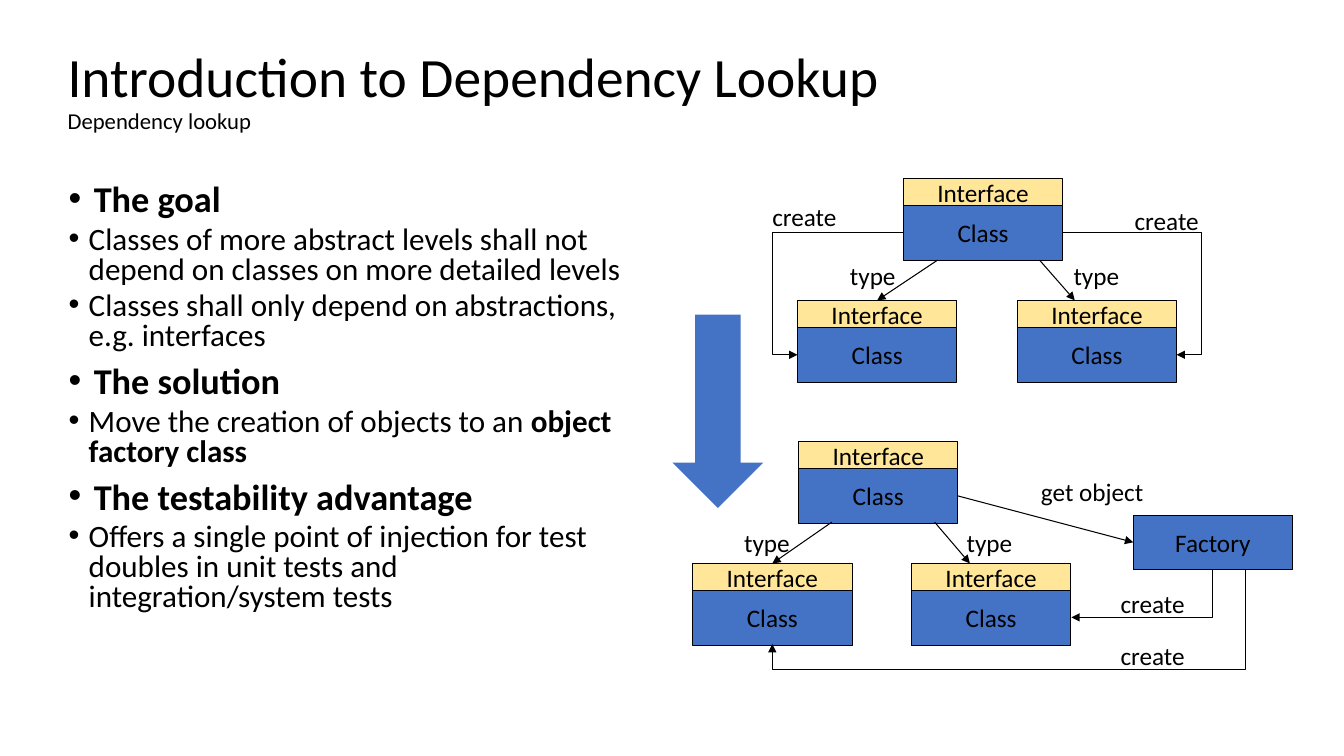
"""Build a slide that introduces dependency lookup with two class diagrams."""
from lxml.etree import SubElement
from pptx import Presentation
from pptx.dml.color import RGBColor
from pptx.enum.shapes import MSO_CONNECTOR as Link, MSO_SHAPE as Shape
from pptx.enum.text import MSO_ANCHOR as Anchor, MSO_AUTO_SIZE as AutoSize, PP_ALIGN as Align
from pptx.oxml.ns import qn
from pptx.util import Inches, Pt

BLACK = RGBColor(0x00, 0x00, 0x00)
BLUE = RGBColor(0x44, 0x72, 0xC4)
YELLOW = RGBColor(0xFF, 0xE6, 0x99)
FONT = "Calibri"
BOX_WIDTH, CLASS_HEIGHT, INTERFACE_HEIGHT = 1.58, 0.54, 0.27
TOP, LEFT, RIGHT = 0, 1, 3

TOPICS = [
    ("The goal", [
        ("Classes of more abstract levels shall not depend on classes on more detailed levels", ""),
        ("Classes shall only depend on abstractions, e.g. interfaces", ""),
    ]),
    ("The solution", [("Move the creation of objects to an ", "object factory class")]),
    ("The testability advantage", [
        ("Offers a single point of injection for test doubles in unit tests "
         "and integration/system tests", ""),
    ]),
]
LABELS = [
    ("create", 10.88, 2.04, 1.01, Align.RIGHT),
    ("create", 7.66, 2.0, 1.01, Align.LEFT),
    ("type", 8.43, 2.58, 1.01, Align.LEFT),
    ("type", 10.09, 2.58, 1.01, Align.RIGHT),
    ("create", 10.74, 5.84, 1.01, Align.RIGHT),
    ("create", 10.74, 6.35, 1.01, Align.RIGHT),
    ("type", 7.38, 5.23, 1.01, Align.LEFT),
    ("type", 9.03, 5.23, 1.01, Align.RIGHT),
    ("get object", 9.84, 4.73, 1.5, Align.RIGHT),
]


def set_font(font, size, bold=False):
    """Apply the slide's typeface and colour at a size."""
    font.name, font.size, font.bold = FONT, Pt(size), bold
    font.color.rgb = BLACK


def place(shape, left, top, width, height):
    """Move and size a shape, in inches."""
    shape.left, shape.top = Inches(left), Inches(top)
    shape.width, shape.height = Inches(width), Inches(height)


def fill_title(title, heading, subheading):
    """Write the title and its small second line."""
    place(title, 0.57, 0.56, 12.23, 0.71)
    frame = title.text_frame
    frame.auto_size, frame.vertical_anchor = AutoSize.NONE, Anchor.MIDDLE
    para = frame.paragraphs[0]
    para.alignment, para.line_spacing = Align.LEFT, 0.9
    set_font(para.font, 39.6)
    para.add_run().text = heading
    para.add_line_break()
    span = para.add_run()
    span.text = subheading
    span.font.size = Pt(16.2)


def add_bullet(para, level, indent, size, space, bold):
    """Format a paragraph as a bulleted item."""
    para.level = level
    para.line_spacing, para.space_before = 0.8, Pt(space)
    para.space_after = Pt(0)
    properties = para._p.get_or_add_pPr()
    properties.set("marL", str(Inches(indent)))
    properties.set("indent", str(-Inches(indent)))
    SubElement(properties, qn("a:buFont"), typeface="Arial")
    SubElement(properties, qn("a:buChar"), char="•")
    set_font(para.font, size, bold)


def fill_body(body):
    """Write the topics and their points as a two-level list."""
    place(body, 0.58, 1.78, 5.83, 4.62)
    frame = body.text_frame
    frame.auto_size = AutoSize.NONE
    for number, (heading, points) in enumerate(TOPICS):
        para = frame.add_paragraph() if number else frame.paragraphs[0]
        add_bullet(para, 0, 0.25, 25.9, 10 if number else 0, True)
        para.add_run().text = heading
        for plain, strong in points:
            para = frame.add_paragraph()
            add_bullet(para, 1, 0.2, 22.2, 5, False)
            para.add_run().text = plain
            if strong:
                span = para.add_run()
                span.text = strong
                span.font.bold = True


def add_box(page, text, left, top, height, colour):
    """Add an outlined rectangle with centred text."""
    box = page.shapes.add_shape(
        Shape.RECTANGLE, Inches(left), Inches(top), Inches(BOX_WIDTH), Inches(height))
    box.shadow.inherit = False
    box.fill.solid()
    box.fill.fore_color.rgb = colour
    box.line.color.rgb, box.line.width = BLACK, Pt(0.5)
    frame = box.text_frame
    frame.vertical_anchor = Anchor.MIDDLE
    frame.margin_top = frame.margin_bottom = Inches(0.08)
    para = frame.paragraphs[0]
    para.text, para.alignment = text, Align.CENTER
    set_font(para.font, 18)
    return box


def add_class(page, left, top):
    """Add a class below its interface and return both boxes."""
    body = add_box(page, "Class", left, top + INTERFACE_HEIGHT, CLASS_HEIGHT, BLUE)
    interface = add_box(page, "Interface", left, top, INTERFACE_HEIGHT, YELLOW)
    return interface, body


def add_label(page, text, left, top, width, align):
    """Add an arrow label without insets."""
    label = page.shapes.add_textbox(Inches(left), Inches(top), Inches(width), Inches(0.3))
    frame = label.text_frame
    frame.word_wrap, frame.auto_size = True, AutoSize.SHAPE_TO_FIT_TEXT
    frame.margin_left = frame.margin_right = frame.margin_top = frame.margin_bottom = 0
    para = frame.paragraphs[0]
    para.text, para.alignment = text, align
    set_font(para.font, 18)


def add_arrow(page, begin, end, kind=Link.STRAIGHT):
    """Add a thin black connector with an arrowhead at its end."""
    arrow = page.shapes.add_connector(kind, *map(Inches, begin + end))
    arrow.line.color.rgb, arrow.line.width = BLACK, Pt(0.75)
    SubElement(arrow.line._get_or_add_ln(), qn("a:tailEnd"), type="triangle")
    SubElement(arrow._element.spPr, qn("a:effectLst"))
    return arrow


def add_elbow(page, preset, frame, rotation=0, flip=False, adjustments=()):
    """Add a bent arrow within a left, top, width, height frame."""
    left, top, width, height = frame
    arrow = add_arrow(page, (left, top), (left + width, top + height), Link.ELBOW)
    properties = arrow._element.spPr
    transform = properties.find(qn("a:xfrm"))
    if rotation:
        transform.set("rot", str(rotation * 60000))
    if flip:
        transform.set("flipV", "1")
    geometry = properties.find(qn("a:prstGeom"))
    geometry.set("prst", preset)
    for number, ratio in enumerate(adjustments, 1):
        SubElement(geometry.find(qn("a:avLst")), qn("a:gd"),
                   name=f"adj{number}", fmla=f"val {round(ratio * 100000)}")


def draw_direct_creation(page):
    """Draw the classes that create their own dependencies."""
    left_interface, _ = add_class(page, 7.91, 2.98)
    add_class(page, 10.09, 2.98)
    add_class(page, 8.96, 1.77)
    add_arrow(page, (9.3, 2.58), (8.7, 2.98)).end_connect(left_interface, TOP)
    add_arrow(page, (10.31, 2.58), (10.66, 2.98))
    add_elbow(page, "bentConnector3", (7.91, 2.31, 1.05, 1.21), 180, True, [0.25 / 1.05 + 1])
    add_elbow(page, "bentConnector3", (10.54, 2.31, 1.13, 1.21), adjustments=[0.25 / 1.13 + 1])


def draw_factory_creation(page):
    """Draw the classes whose dependencies come from a factory."""
    left_interface, _ = add_class(page, 6.87, 5.59)
    add_class(page, 9.04, 5.59)
    _, client = add_class(page, 7.92, 4.38)
    factory = add_box(page, "Factory", 11.24, 5.11, CLASS_HEIGHT, BLUE)
    add_arrow(page, (8.25, 5.18), (7.66, 5.59)).end_connect(left_interface, TOP)
    add_arrow(page, (9.27, 5.18), (9.62, 5.59))
    lookup = add_arrow(page, (9.5, 4.92), (11.24, 5.38))
    lookup.begin_connect(client, RIGHT)
    lookup.end_connect(factory, LEFT)
    add_elbow(page, "bentConnector2", (11.09, 5.19, 0.47, 1.4), 90)
    add_elbow(page, "bentConnector4", (7.66, 5.65, 4.79, 0.74), 180, True, [0.02, 0.25 / 0.74 + 1])


def add_step_arrow(page):
    """Add the block arrow that leads from the first diagram to the second."""
    arrow = page.shapes.add_shape(
        Shape.DOWN_ARROW, Inches(6.67), Inches(3.12), Inches(0.9), Inches(1.92))
    arrow.shadow.inherit = False
    arrow.fill.solid()
    arrow.fill.fore_color.rgb = BLUE
    arrow.line.fill.background()


def main():
    """Build and save the deck."""
    deck = Presentation()
    deck.slide_width, deck.slide_height = Inches(13.33), Inches(7.5)
    page = deck.slides.add_slide(deck.slide_layouts[1])
    fill_title(page.shapes.title, "Introduction to Dependency Lookup", "Dependency lookup")
    fill_body(page.placeholders[1])
    draw_direct_creation(page)
    draw_factory_creation(page)
    for label in LABELS:
        add_label(page, *label)
    add_step_arrow(page)
    deck.save("out.pptx")


if __name__ == "__main__":
    main()
